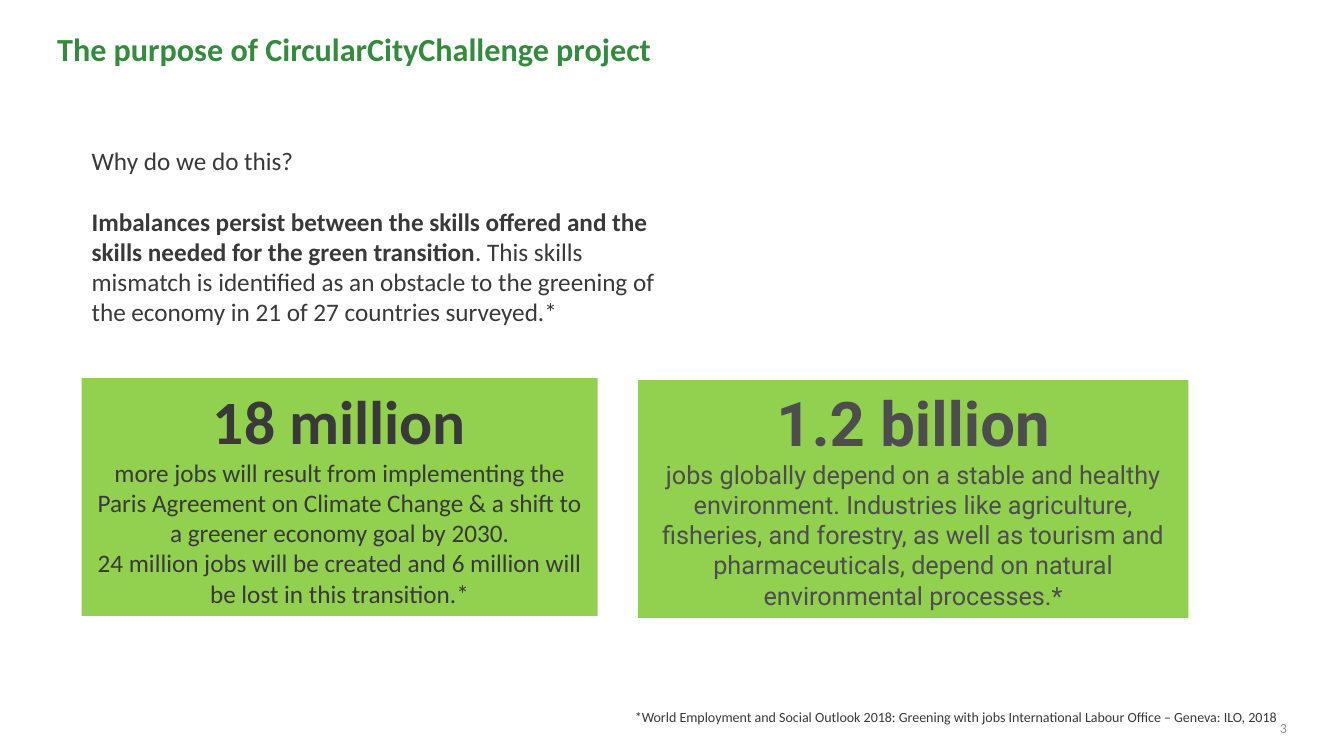
from dataclasses import dataclass

from pptx import Presentation
from pptx.dml.color import RGBColor
from pptx.enum.shapes import MSO_SHAPE
from pptx.enum.text import MSO_ANCHOR, PP_ALIGN
from pptx.util import Cm, Pt


@dataclass(frozen=True)
class Theme:
    green: RGBColor = RGBColor(0x34, 0x8B, 0x3D)
    lime: RGBColor = RGBColor(0x92, 0xD0, 0x50)
    dark: RGBColor = RGBColor(0x39, 0x39, 0x39)
    slate: RGBColor = RGBColor(0x4D, 0x4D, 0x4D)
    grey: RGBColor = RGBColor(0x91, 0x91, 0x91)
    font: str = "Calibri"
    accent_font: str = "Roboto"
    title: Pt = Pt(23)
    figure: Pt = Pt(44)
    body: Pt = Pt(18)
    small: Pt = Pt(10)


theme = Theme()


def style(p, size, color, bold=None, font=theme.font, align=PP_ALIGN.LEFT):
    p.alignment = align
    p.font.name, p.font.size, p.font.bold = font, size, bold
    p.font.color.rgb = color


def add_text_box(left, top, width, height, anchor=MSO_ANCHOR.TOP):
    """Add a wrapping text box, measured in centimetres, and return its frame."""
    tf = s.shapes.add_textbox(Cm(left), Cm(top), Cm(width), Cm(height)).text_frame
    tf.word_wrap = True
    tf.vertical_anchor = anchor
    return tf


prs = Presentation()
prs.slide_width, prs.slide_height = Cm(33.87), Cm(19.05)
s = prs.slides.add_slide(prs.slide_layouts[6])

# Title
tf = add_text_box(1.19, 0.76, 25.86, 1.07, MSO_ANCHOR.MIDDLE)
tf.margin_top = tf.margin_bottom = 0
p = tf.paragraphs[0]
p.text = "The purpose of CircularCityChallenge project"
p.line_spacing = 0.9
style(p, theme.title, theme.green, bold=True)

# Reason for the project
tf = add_text_box(2.06, 3.53, 15.09, 4.88)
p = tf.paragraphs[0]
p.text = "Why do we do this?"
style(p, theme.body, theme.dark)
p = tf.add_paragraph()
p.space_before = Pt(22)
style(p, theme.body, theme.dark)
r = p.add_run()
r.text = ("Imbalances persist between the skills offered and the skills needed "
          "for the green transition")
r.font.bold = True
r = p.add_run()
r.text = (". This skills mismatch is identified as an obstacle to the greening of "
          "the economy in 21 of 27 countries surveyed.*")

# Key figures
figure_cards = [
    (2.06, 9.53, 13.0, theme.font, theme.dark, "18 million", [
        "more jobs will result from implementing the Paris Agreement on Climate "
        "Change & a shift to a greener economy goal by 2030.",
        "24 million jobs will be created and 6 million will be lost in this transition.*",
    ]),
    (16.08, 9.58, 13.87, theme.accent_font, theme.slate, "1.2 billion", [
        "jobs globally depend on a stable and healthy environment. Industries like "
        "agriculture, fisheries, and forestry, as well as tourism and pharmaceuticals, "
        "depend on natural environmental processes.*",
    ]),
]
for left, top, width, font, color, figure, details in figure_cards:
    sp = s.shapes.add_shape(MSO_SHAPE.RECTANGLE, Cm(left), Cm(top), Cm(width), Cm(5.99))
    sp.shadow.inherit = False
    sp.fill.solid()
    sp.fill.fore_color.rgb = theme.lime
    sp.line.fill.background()
    tf = sp.text_frame
    tf.word_wrap = True
    tf.vertical_anchor = MSO_ANCHOR.TOP
    p = tf.paragraphs[0]
    p.text = figure
    style(p, theme.figure, color, True, font, PP_ALIGN.CENTER)
    for detail in details:
        p = tf.add_paragraph()
        p.text = detail
        style(p, theme.body, color, False, font, PP_ALIGN.CENTER)

# Source and page number
p = add_text_box(15.75, 17.73, 16.94, 0.69).paragraphs[0]
p.text = ("*World Employment and Social Outlook 2018: Greening with jobs "
          "International Labour Office – Geneva: ILO, 2018")
style(p, theme.small, theme.dark)
p = add_text_box(30.78, 18.03, 1.9, 0.64, MSO_ANCHOR.MIDDLE).paragraphs[0]
p.text = "3"
style(p, theme.small, theme.grey, align=PP_ALIGN.RIGHT)

prs.save("out.pptx")
